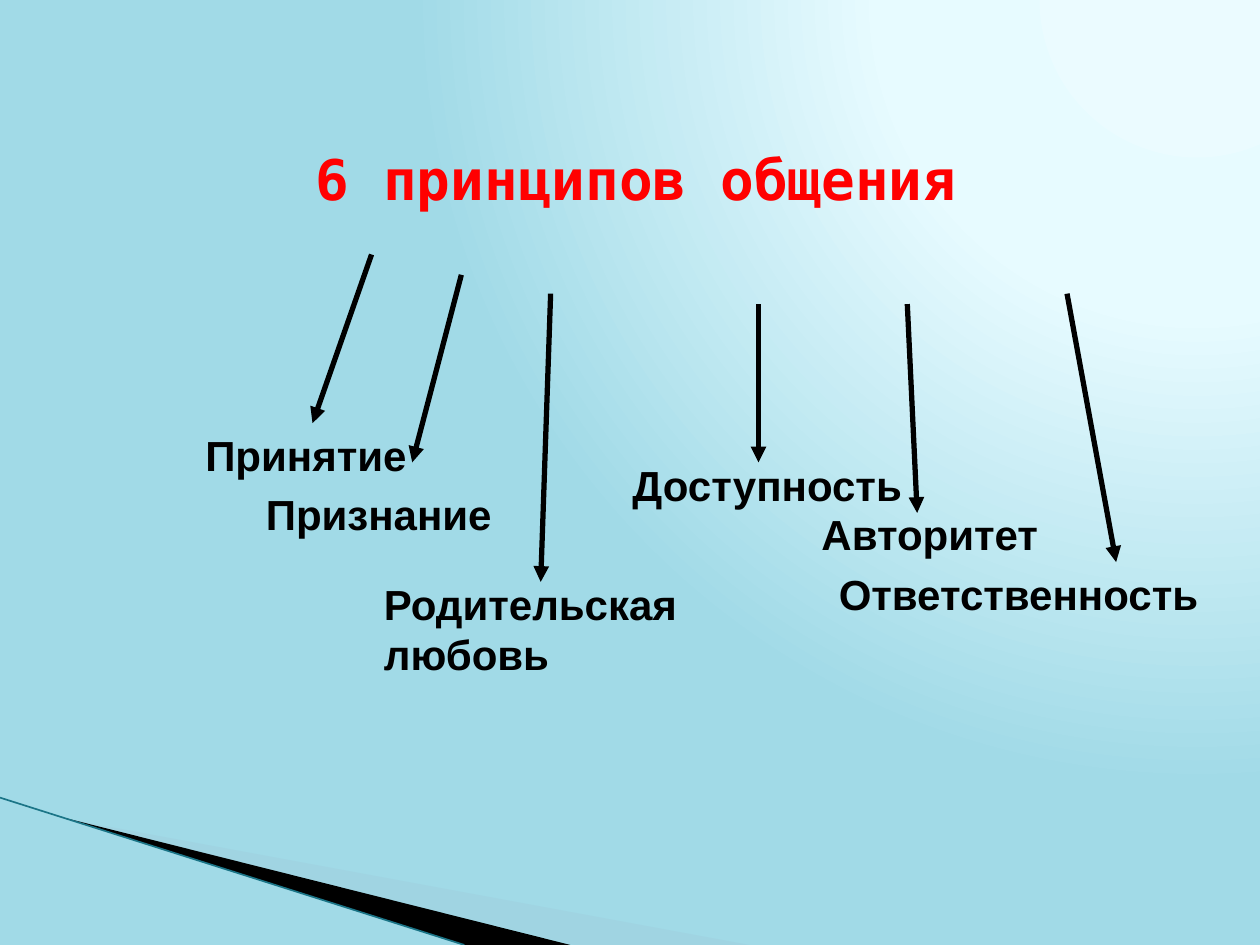
from lxml.etree import SubElement
from pptx import Presentation
from pptx.dml.color import RGBColor
from pptx.enum.shapes import MSO_CONNECTOR
from pptx.enum.text import MSO_ANCHOR, MSO_AUTO_SIZE as AutoSize, PP_ALIGN
from pptx.oxml import parse_xml
from pptx.oxml.ns import nsdecls, qn
from pptx.util import Cm, Pt

COLORS = {
    "glow": "EBFBFF", "halo": "E7FBFF", "sky": "A1DAE7",
    "wing": "A0CBDC", "edge": "1B7587", "ink": "000000", "title": "FF0000",
}
TITLE_FONT = {"name": "DejaVu Sans Mono", "size": Pt(32), "bold": True}
LABEL_FONT = {"name": "Arial", "size": Pt(24), "bold": True}

# Each principle: label, (left, top, width, height), arrow start, arrow end
PRINCIPLES = [
    ("Принятие", (0, 3.4, 4.8, 1.27), (3.6, 0), (2.41, 3.4)),
    ("Признание", (1.22, 4.6, 5.79, 1.27), (5.41, 0.41), (4.42, 4.19)),
    ("Родительская любовь", (3.6, 6.4, 8.81, 2.29), (7.21, 0.79), (7.01, 6.6)),
    ("Доступность", (8.61, 4, 6, 1.27), (11.4, 1), (11.4, 4.19)),
    ("Авторитет", (12.42, 5, 5.69, 1.27), (14.4, 1), (14.6, 5.21)),
    ("Ответственность", (12.77, 6.2, 8.13, 1.27), (17.62, 0.79), (18.61, 6.2)),
]


def rgb(color):
    return RGBColor.from_string(COLORS[color])


def format_font(font, values, color):
    for attribute, value in values.items():
        setattr(font, attribute, value)
    font.color.rgb = rgb(color)


def paint_background(slide):
    stops = "".join(
        f'<a:gs pos="{position * 1000}"><a:srgbClr val="{COLORS[color]}"/></a:gs>'
        for position, color in ((0, "glow"), (40, "halo"), (100, "sky")))
    gradient = parse_xml(
        f'<a:gradFill {nsdecls("a")} rotWithShape="1"><a:gsLst>{stops}</a:gsLst>'
        '<a:path path="circle"><a:fillToRect l="95000" t="-106000" r="5000" b="206000"/>'
        '</a:path></a:gradFill>')
    fill = slide.background.fill
    fill.solid()
    solid = slide.element.find(".//" + qn("p:bgPr")).find(qn("a:solidFill"))
    solid.getparent().replace(solid, gradient)


def add_line(slide, start, end, color, width, arrow=False):
    line = slide.shapes.add_connector(
        MSO_CONNECTOR.STRAIGHT, *(Cm(value) for value in (*start, *end)))
    line.line.color.rgb = rgb(color)
    line.line.width = Pt(width)
    if arrow:
        SubElement(line.line._get_or_add_ln(), qn("a:tailEnd"), type="triangle")
    SubElement(line._element.spPr, qn("a:effectLst"))


def add_wedge(slide, points, color, opacity=100):
    start, *others = [(Cm(x), Cm(y)) for x, y in points]
    builder = slide.shapes.build_freeform(*start)
    builder.add_line_segments(others, close=True)
    wedge = builder.convert_to_shape()
    wedge.shadow.inherit = False
    wedge.fill.solid()
    wedge.fill.fore_color.rgb = rgb(color)
    wedge.line.fill.background()
    if opacity < 100:
        tint = wedge._element.spPr.find(".//" + qn("a:srgbClr"))
        SubElement(tint, qn("a:alpha"), val=str(opacity * 1000))


def draw_corner(slide, left, top, height):
    bottom = top + height
    add_wedge(slide, [(left + 1.4, top + 0.44), (left + 15.11, bottom),
                      (left + 11.58, bottom)], "wing", 40)
    add_wedge(slide, [(left + 1.35, top + 0.42), (left + 11.5, bottom),
                      (left + 9.36, bottom)], "ink")
    add_line(slide, (left, top), (left + 9.36, bottom), "edge", 0.95)


def place_title(slide, left, top, width, height):
    title = slide.shapes.title
    place = {"left": left, "top": top, "width": width, "height": height}
    for attribute, value in place.items():
        setattr(title, attribute, Cm(value))
    frame = title.text_frame
    frame.text = "6 принципов общения"
    frame.auto_size = AutoSize.SHAPE_TO_FIT_TEXT
    frame.vertical_anchor = MSO_ANCHOR.MIDDLE
    heading = frame.paragraphs[0]
    heading.alignment = PP_ALIGN.CENTER
    format_font(heading.runs[0].font, TITLE_FONT, "title")


def draw_principles(slide, left, top):
    # Arrows fanning out from the title
    for _, _, start, end in PRINCIPLES:
        start, end = ((left + x, top + y) for x, y in (start, end))
        add_line(slide, start, end, "ink", 3, arrow=True)
    # Labels at the arrowheads
    for label, (x, y, width, height), _, _ in PRINCIPLES:
        box = slide.shapes.add_textbox(
            Cm(left + x), Cm(top + y), Cm(width), Cm(height))
        frame = box.text_frame
        frame.word_wrap = True
        frame.auto_size = AutoSize.SHAPE_TO_FIT_TEXT
        frame.text = label
        format_font(frame.paragraphs[0].runs[0].font, LABEL_FONT, "ink")


def main():
    presentation = Presentation()
    presentation.slide_width, presentation.slide_height = Cm(25.4), Cm(19.05)
    slide = presentation.slides.add_slide(presentation.slide_layouts[5])
    paint_background(slide)
    draw_corner(slide, 0, 16.08, 2.97)
    place_title(slide, 1.4, 2.77, 22.86, 1.63)
    draw_principles(slide, 3.89, 5.13)
    presentation.save("out.pptx")


if __name__ == "__main__":
    main()
